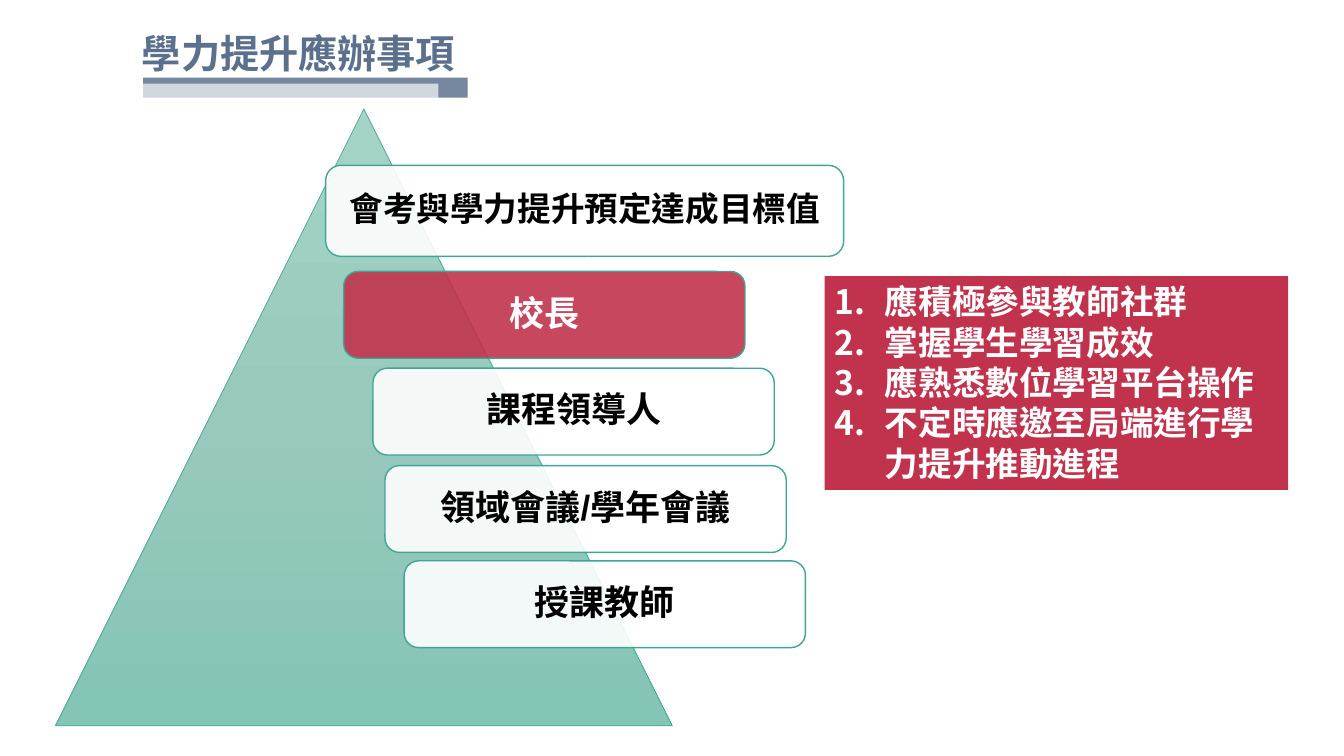
from copy import deepcopy

from lxml.etree import SubElement
from pptx import Presentation
from pptx.dml.color import RGBColor
from pptx.enum.lang import MSO_LANGUAGE_ID as Language
from pptx.enum.shapes import MSO_SHAPE as Shape
from pptx.enum.text import MSO_ANCHOR as Anchor, MSO_AUTO_SIZE as AutoSize, PP_ALIGN as Align
from pptx.oxml.ns import qn
from pptx.util import Pt

COLOURS = {
    "slate": "5B708C",
    "white": "FFFFFF",
    "black": "000000",
    "green": "40A693",
    "crimson": "C1334D",
}
PYRAMID_STOPS = [(0, "A4D4C8"), (0.5, "98C9BD"), (1, "84C5B5")]
NOTO, ARIAL = "Noto Sans CJK SC", "Arial"

# left, top, width, height, fill, text colour, size, typeface, wording
LEVELS = [
    (232.6, 118.1, 370, 65, "white", "black", 24, NOTO, "會考與學力提升預定達成目標值"),
    (245.5, 193.9, 286.6, 62, "crimson", "white", 25, NOTO, "校長"),
    (266.4, 263, 286.6, 62, "white", "black", 25, NOTO, "課程領導人"),
    (275, 332.6, 286.6, 62, "white", "black", 25, ARIAL, "領域會議/學年會議"),
    (288.7, 400.6, 286.6, 62, "white", "black", 25, ARIAL, "授課教師"),
]
PRINCIPAL_DUTIES = [
    "應積極參與教師社群",
    "掌握學生學習成效",
    "應熟悉數位學習平台操作",
    "不定時應邀至局端進行學力提升推動進程",
]


def rgb(name):
    return RGBColor.from_string(COLOURS[name])


def set_all(target, values):
    for name, value in values.items():
        setattr(target, name, value)


def add_block(page, kind, place, fill=None, opacity=100, line_width=0):
    block = page.shapes.add_shape(kind, *map(Pt, place))
    block.shadow.inherit = False
    if fill:
        block.fill.solid()
        block.fill.fore_color.rgb = rgb(fill)
        if opacity < 100:
            colour = block.fill._xPr.find(qn("a:solidFill"))[0]
            SubElement(colour, qn("a:alpha"), val=str(opacity * 1000))
    if line_width:
        block.line.color.rgb = rgb("green")
        block.line.width = Pt(line_width)
    else:
        block.line.fill.background()
    return block


def write(para, wording, size, colour, typeface):
    span = para.add_run()
    span.text = wording
    set_all(span.font, {"name": typeface, "size": Pt(size), "bold": True,
                        "language_id": Language.TRADITIONAL_CHINESE})
    span.font.color.rgb = rgb(colour)
    if typeface == NOTO:
        span.font._element.find(qn("a:latin")).addnext(
            span.font._element.makeelement(qn("a:ea"), {"typeface": typeface}))


def add_title(page):
    box = page.shapes.add_textbox(Pt(94.3), Pt(10.1), Pt(280.8), Pt(48.2))
    set_all(box.text_frame, {"word_wrap": False, "vertical_anchor": Anchor.MIDDLE,
                             "auto_size": AutoSize.SHAPE_TO_FIT_TEXT})
    para = box.text_frame.paragraphs[0]
    para.line_spacing = 1.2
    write(para, "學力提升應辦事項", 28, "slate", ARIAL)
    add_block(page, Shape.RECTANGLE, (102.2, 55.4, 231.8, 14.4), "slate", 83)
    add_block(page, Shape.RECTANGLE, (102.2, 59.8, 211, 12.2), "white", 67)


def add_pyramid(page):
    pyramid = add_block(page, Shape.ISOSCELES_TRIANGLE, (39.6, 77.8, 440.6, 440.6), line_width=0.5)
    pyramid.fill.gradient()
    pyramid.fill.gradient_angle = 270
    stop_list = pyramid.fill._xPr.find(qn("a:gradFill")).find(qn("a:gsLst"))
    stop_list.insert(1, deepcopy(stop_list[0]))
    for stop, (position, colour) in zip(pyramid.fill.gradient_stops, PYRAMID_STOPS):
        stop.position = position
        stop.color.rgb = RGBColor.from_string(colour)


def add_level(page, left, top, width, height, fill, colour, size, typeface, wording):
    place = (left, top, width, height)
    level = add_block(page, Shape.ROUNDED_RECTANGLE, place, fill, 90, line_width=1)
    inset = Pt(7.2)
    set_all(level.text_frame, {"word_wrap": True, "vertical_anchor": Anchor.MIDDLE,
                               "margin_left": inset, "margin_right": inset,
                               "margin_top": inset, "margin_bottom": inset})
    para = level.text_frame.paragraphs[0]
    set_all(para, {"alignment": Align.CENTER, "line_spacing": 0.9, "space_after": Pt(8.5)})
    write(para, wording, size, colour, typeface)


def add_numbered_panel(page, place, items):
    panel = add_block(page, Shape.RECTANGLE, place, "crimson")
    frame = panel.text_frame
    set_all(frame, {"word_wrap": True, "vertical_anchor": Anchor.TOP,
                    "auto_size": AutoSize.SHAPE_TO_FIT_TEXT})
    for index, item in enumerate(items):
        para = frame.add_paragraph() if index else frame.paragraphs[0]
        para.alignment = Align.LEFT
        properties = para._p.get_or_add_pPr()
        properties.set("marL", str(Pt(36)))
        properties.set("indent", str(-Pt(36)))
        SubElement(properties, qn("a:buFont"), typeface=NOTO)
        SubElement(properties, qn("a:buAutoNum"), type="arabicPeriod")
        write(para, item, 24, "white", NOTO)


def main():
    deck = Presentation()
    set_all(deck, {"slide_width": Pt(960), "slide_height": Pt(540)})
    page = deck.slides.add_slide(deck.slide_layouts[6])
    add_title(page)
    add_pyramid(page)
    for level in LEVELS:
        add_level(page, *level)
    add_numbered_panel(page, (589, 197.3, 331.2, 152.6), PRINCIPAL_DUTIES)
    deck.save("out.pptx")


if __name__ == "__main__":
    main()
